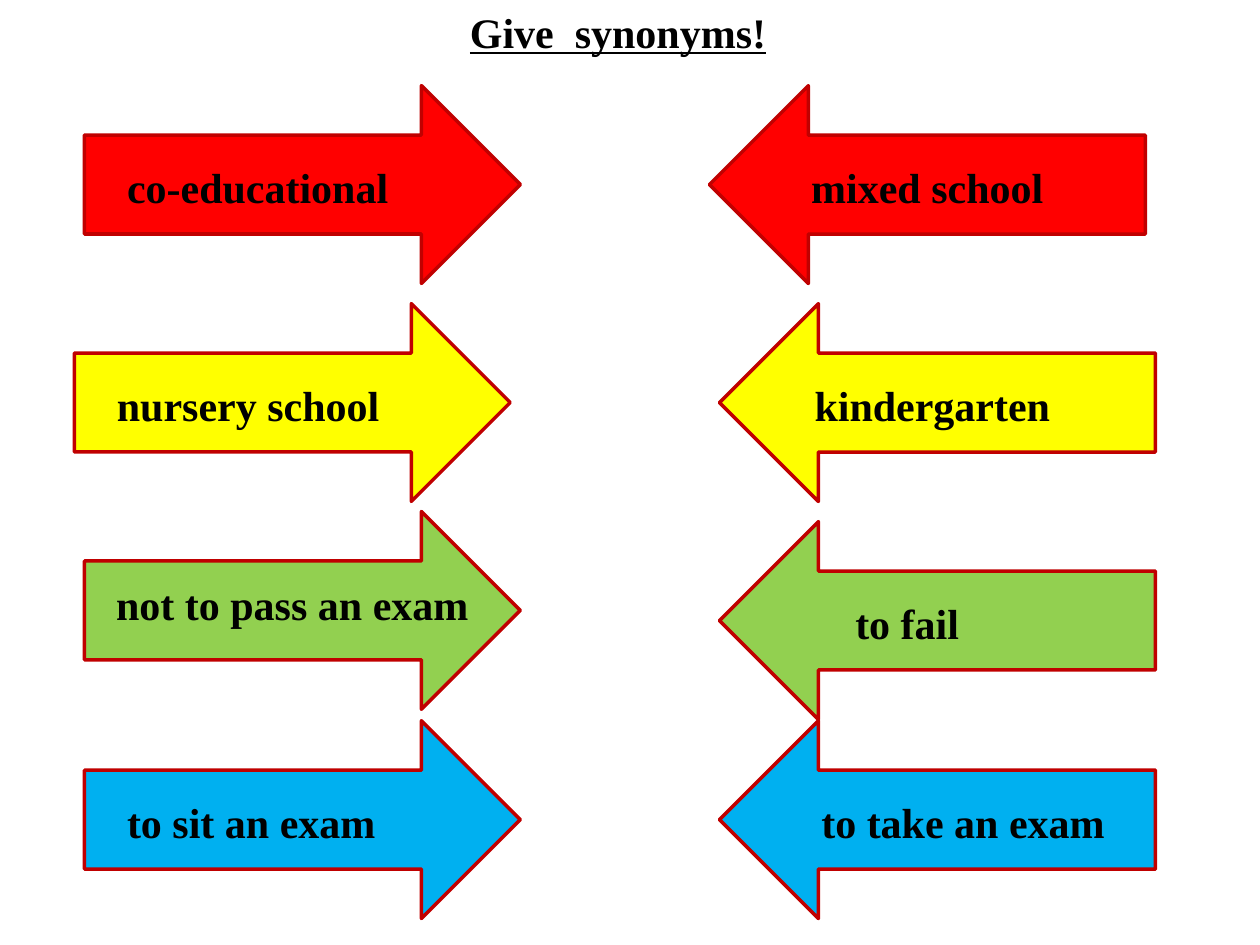
from pptx import Presentation
from pptx.dml.color import RGBColor
from pptx.enum.shapes import MSO_SHAPE
from pptx.enum.text import MSO_AUTO_SIZE, PP_ALIGN
from pptx.util import Inches, Pt

THEME = {
    "font": "Times New Roman", "size": 24, "text": "000000",
    "outline": "C00000", "outline_width": 2,
    "red": "FF0000", "yellow": "FFFF00", "green": "92D050", "blue": "00B0F0",
}
LEFT, CENTER = PP_ALIGN.LEFT, PP_ALIGN.CENTER

TITLE = "Give  synonyms!"
# Each side: phrase, arrow shift (x, y) in grid steps,
# label offset from the arrow (x, y), label width, alignment
PAIRS = [
    ("red",
     ("co-educational", (0, 0), (0.24, 0.55), 2.52, LEFT),
     ("mixed school", (-1, 0), (0.71, 0.55), 2.83, LEFT)),
    ("yellow",
     ("nursery school", (-1, 0), (0.24, 0.55), 2.36, LEFT),
     ("kindergarten", (0, 0), (0.47, 0.55), 2.44, CENTER)),
    ("green",
     ("not to pass an exam", (0, -1), (-0.08, 0.48), 3.46, CENTER),
     ("to fail", (0, 0), (0.39, 0.55), 2.2, CENTER)),
    ("blue",
     ("to sit an exam", (0, 0), (0.24, 0.55), 2.28, LEFT),
     ("to take an exam", (0, 0), (0.71, 0.55), 2.99, LEFT)),
]

SLIDE_W, SLIDE_H = 10, 7.5
STEP = 0.08
ARROW_W, ARROW_H = 3.46, 1.57
COLUMNS = (0.67, 5.71)
FIRST_ROW = 0.68
ROW_PITCHES = (0, 1.73, 3.46, 5.04)
LABEL_H = 0.5


def add_label(slide, phrase, x, y, width, align, underline=False):
    label = slide.shapes.add_textbox(
        Inches(x), Inches(y), Inches(width), Inches(LABEL_H))
    frame = label.text_frame
    frame.word_wrap = True
    frame.auto_size = MSO_AUTO_SIZE.SHAPE_TO_FIT_TEXT
    paragraph = frame.paragraphs[0]
    paragraph.alignment = align
    run = paragraph.add_run()
    run.text = phrase
    font = run.font
    font.name, font.size, font.bold = THEME["font"], Pt(THEME["size"]), True
    if underline:
        font.underline = True
    font.color.rgb = RGBColor.from_string(THEME["text"])


def add_arrow(slide, x, y, color, rotation):
    arrow = slide.shapes.add_shape(
        MSO_SHAPE.RIGHT_ARROW,
        Inches(x), Inches(y), Inches(ARROW_W), Inches(ARROW_H))
    arrow.rotation = rotation
    arrow.shadow.inherit = False
    arrow.fill.solid()
    arrow.fill.fore_color.rgb = RGBColor.from_string(THEME[color])
    arrow.line.color.rgb = RGBColor.from_string(THEME["outline"])
    arrow.line.width = Pt(THEME["outline_width"])


def main():
    prs = Presentation()
    prs.slide_width, prs.slide_height = Inches(SLIDE_W), Inches(SLIDE_H)
    slide = prs.slides.add_slide(prs.slide_layouts[6])
    add_label(slide, TITLE, 3.03, 0, 3.75, CENTER, underline=True)

    for (color, *sides), pitch in zip(PAIRS, ROW_PITCHES):
        for side, column, rotation in zip(sides, COLUMNS, (0, 180)):
            phrase, (shift_x, shift_y), (label_x, label_y), width, align = side
            x = column + shift_x * STEP
            y = FIRST_ROW + pitch + shift_y * STEP
            add_arrow(slide, x, y, color, rotation)
            add_label(slide, phrase, x + label_x, y + label_y, width, align)

    prs.save("out.pptx")


if __name__ == "__main__":
    main()
